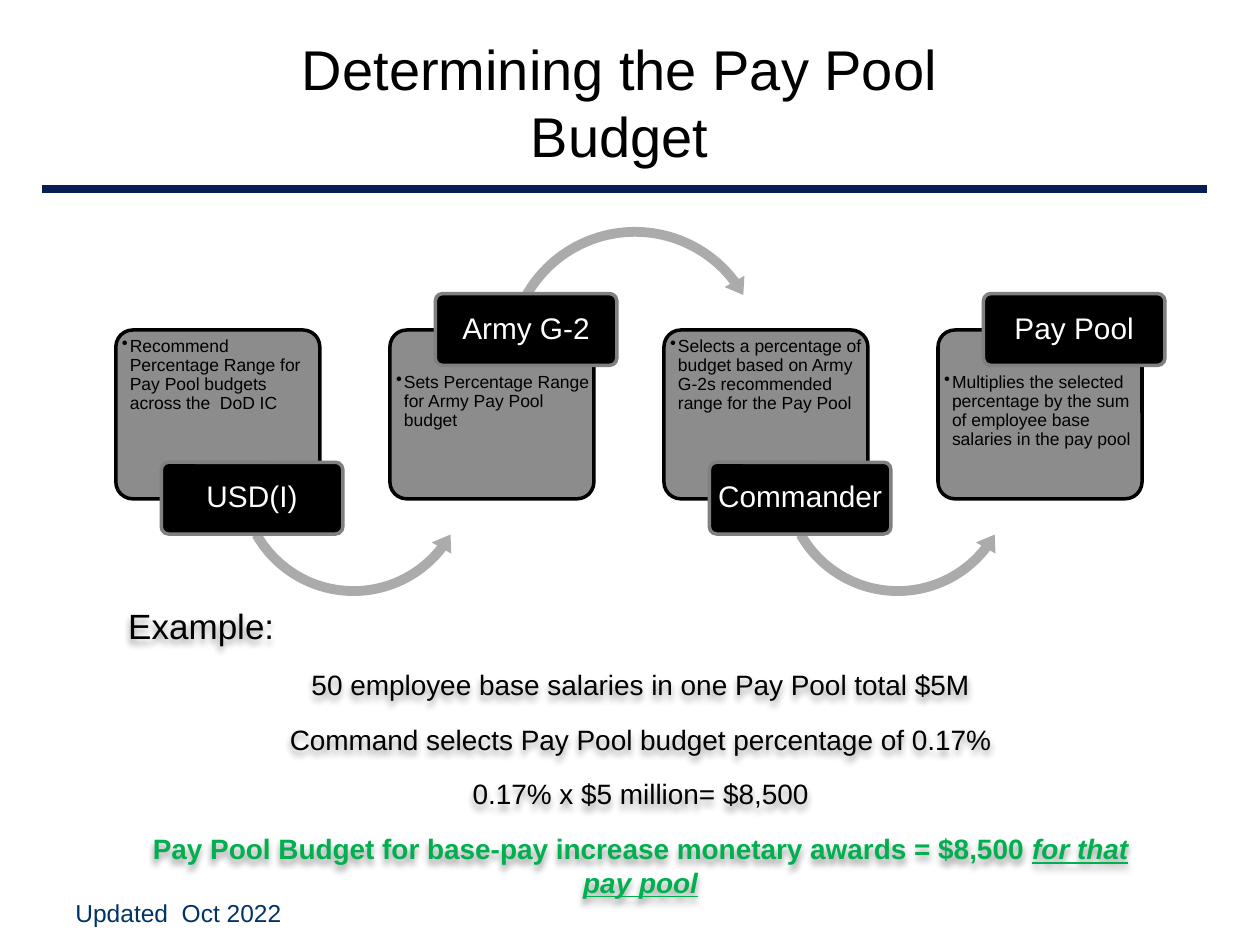
from dataclasses import dataclass

from pptx import Presentation
from pptx.dml.color import RGBColor
from pptx.enum.shapes import MSO_CONNECTOR as Connector, MSO_SHAPE as Shape
from pptx.enum.text import MSO_ANCHOR as Anchor, PP_ALIGN as Align
from pptx.oxml import parse_xml
from pptx.oxml.ns import nsdecls, qn
from pptx.oxml.xmlchemy import OxmlElement
from pptx.util import Pt

COLORS = {
    "text": "000000",
    "rule": "081D54",
    "body": "808080",
    "arrow": "ABABAB",
    "label": "000000",
    "label_text": "FFFFFF",
    "result": "00B050",
    "footer": "003366",
}
STEP_PITCH = 156.6
STEP_LEFT, STEP_TOP, STEP_WIDTH, STEP_HEIGHT = 66.2, 188.6, 116.6, 96.5
LABEL_SHIFT, LABEL_WIDTH, LABEL_HEIGHT = 26, 103.7, 41
LABEL_HIGH, LABEL_LOW = 167.8, 264.2


@dataclass
class Arc:
    preset: Shape
    left: float
    top: float
    size: float
    adjustments: tuple[float, ...]


@dataclass
class Step:
    label: str
    duty: str
    label_on_top: bool
    arc: Arc | None = None


LOWER_ARC = (0.04, 4.987, 22.742, 90.245, 0.046)
UPPER_ARC = (0.036, 4.467, 193.778, 125.755, 0.042)
STEPS = [
    Step("USD(I)", "Recommend Percentage Range for Pay Pool budgets across the  DoD IC", False,
         Arc(Shape.LEFT_CIRCULAR_ARROW, 131.8, 203.8, 140.4, LOWER_ARC)),
    Step("Army G-2", "Sets Percentage Range for Army Pay Pool budget", True,
         Arc(Shape.CIRCULAR_ARROW, 285.1, 126, 155.5, UPPER_ARC)),
    Step("Commander", "Selects a percentage of budget based on Army G-2s recommended range "
         "for the Pay Pool", False,
         Arc(Shape.LEFT_CIRCULAR_ARROW, 442.8, 203.8, 140.4, LOWER_ARC)),
    Step("Pay Pool", "Multiplies the selected percentage by the sum of employee base "
         "salaries in the pay pool", True),
]


def rgb(name: str) -> RGBColor:
    return RGBColor.from_string(COLORS[name])


def apply_format(target, values: dict) -> None:
    for name, value in values.items():
        setattr(target, name, value)


def add_run(paragraph, text: str, size: float, color: str, **style):
    run = paragraph.add_run()
    run.text = text
    apply_format(run.font, {"name": "Arial", "size": Pt(size), **style})
    run.font.color.rgb = rgb(color)


def add_block(slide, preset: Shape, box: tuple, fill: str, line: str | None = None):
    block = slide.shapes.add_shape(preset, *map(Pt, box))
    block.shadow.inherit = False
    block.fill.solid()
    block.fill.fore_color.rgb = rgb(fill)
    if line:
        block.line.color.rgb = rgb(line)
        block.line.width = Pt(2)
    else:
        block.line.fill.background()
    return block


def set_frame(block, anchor: Anchor, left: float = 0, top: float = 0):
    apply_format(block.text_frame, {
        "word_wrap": True, "vertical_anchor": anchor,
        "margin_left": Pt(left), "margin_top": Pt(top),
        "margin_right": 0, "margin_bottom": 0,
    })
    return block.text_frame.paragraphs[0]


def add_bullet(paragraph, indent: float) -> None:
    properties = paragraph._p.get_or_add_pPr()
    properties.set("marL", str(Pt(indent)))
    properties.set("indent", str(-Pt(indent)))
    bullet = OxmlElement("a:buChar")
    bullet.set("char", "•")
    properties.append(bullet)


def add_step(slide, index: int, step: Step) -> None:
    left = STEP_LEFT + index * STEP_PITCH
    body = add_block(slide, Shape.ROUNDED_RECTANGLE,
                     (left, STEP_TOP, STEP_WIDTH, STEP_HEIGHT), "body", "text")
    body.adjustments[0] = 0.1
    alpha = OxmlElement("a:alpha")
    alpha.set("val", "90000")
    body.fill._xPr.find(qn("a:solidFill"))[0].append(alpha)
    duty = set_frame(body, Anchor.TOP, 0.7, 22 if step.label_on_top else 1.4)
    add_bullet(duty, 4.5)
    apply_format(duty, {"alignment": Align.LEFT, "line_spacing": 0.9})
    add_run(duty, step.duty, 10, "text")

    if step.arc:
        arc = step.arc
        arrow = add_block(slide, arc.preset, (arc.left, arc.top, arc.size, arc.size), "arrow")
        for position, value in enumerate(arc.adjustments):
            arrow.adjustments[position] = value

    label_top = LABEL_HIGH if step.label_on_top else LABEL_LOW
    label = add_block(slide, Shape.ROUNDED_RECTANGLE,
                      (left + LABEL_SHIFT, label_top, LABEL_WIDTH, LABEL_HEIGHT), "label", "body")
    label.adjustments[0] = 0.1
    name = set_frame(label, Anchor.MIDDLE)
    apply_format(name, {"alignment": Align.CENTER, "line_spacing": 0.9})
    add_run(name, step.label, 17, "label_text")


def add_title(slide) -> None:
    title = slide.shapes.title
    apply_format(title, {"left": Pt(138.2), "top": Pt(14.4), "width": Pt(432), "height": Pt(87.8)})
    apply_format(title.text_frame, {"word_wrap": True, "vertical_anchor": Anchor.MIDDLE})
    heading = title.text_frame.paragraphs[0]
    heading.alignment = Align.CENTER
    add_run(heading, "Determining the Pay Pool Budget", 32, "text")


def add_rule(slide) -> None:
    rule = slide.shapes.add_connector(Connector.STRAIGHT, Pt(24), Pt(108), Pt(690), Pt(108))
    rule.line.color.rgb = rgb("rule")
    rule.line.width = Pt(4.5)
    rule._element.spPr.append(OxmlElement("a:effectLst"))


def add_example(slide) -> None:
    example = slide.shapes.add_textbox(Pt(66.2), Pt(342), Pt(599.8), Pt(186.5))
    example._element.spPr.append(parse_xml(
        f'<a:effectLst {nsdecls("a")}><a:outerShdw blurRad="50800" dist="38100" dir="5400000">'
        '<a:srgbClr val="000000"><a:alpha val="40000"/></a:srgbClr></a:outerShdw></a:effectLst>'))
    frame = example.text_frame
    frame.word_wrap = True
    heading = frame.paragraphs[0]
    heading.space_after = Pt(6)
    add_run(heading, "Example:", 20, "text")
    centered = {"alignment": Align.CENTER, "space_before": Pt(6), "space_after": Pt(6)}
    for sentence in ("50 employee base salaries in one Pay Pool total $5M",
                     "Command selects Pay Pool budget percentage of 0.17%",
                     "0.17% x $5 million= $8,500"):
        calculation = frame.add_paragraph()
        apply_format(calculation, centered)
        add_run(calculation, sentence, 16, "text")
    result = frame.add_paragraph()
    apply_format(result, centered)
    add_run(result, "Pay Pool Budget for base-pay increase monetary awards = $8,500 ",
            16, "result", bold=True)
    add_run(result, "for that pay pool", 16, "result", bold=True, italic=True, underline=True)


def add_footer(slide) -> None:
    updated = slide.shapes.add_textbox(Pt(36), Pt(509.8), Pt(167.8), Pt(37.4))
    updated.text_frame.word_wrap = True
    add_run(updated.text_frame.paragraphs[0], "Updated  Oct 2022", 14, "footer")


def main() -> None:
    deck = Presentation()
    apply_format(deck, {"slide_width": Pt(720), "slide_height": Pt(540)})
    slide = deck.slides.add_slide(deck.slide_layouts[5])
    add_rule(slide)
    add_title(slide)
    for index, step in enumerate(STEPS):
        add_step(slide, index, step)
    add_example(slide)
    add_footer(slide)
    deck.save("out.pptx")


if __name__ == "__main__":
    main()
